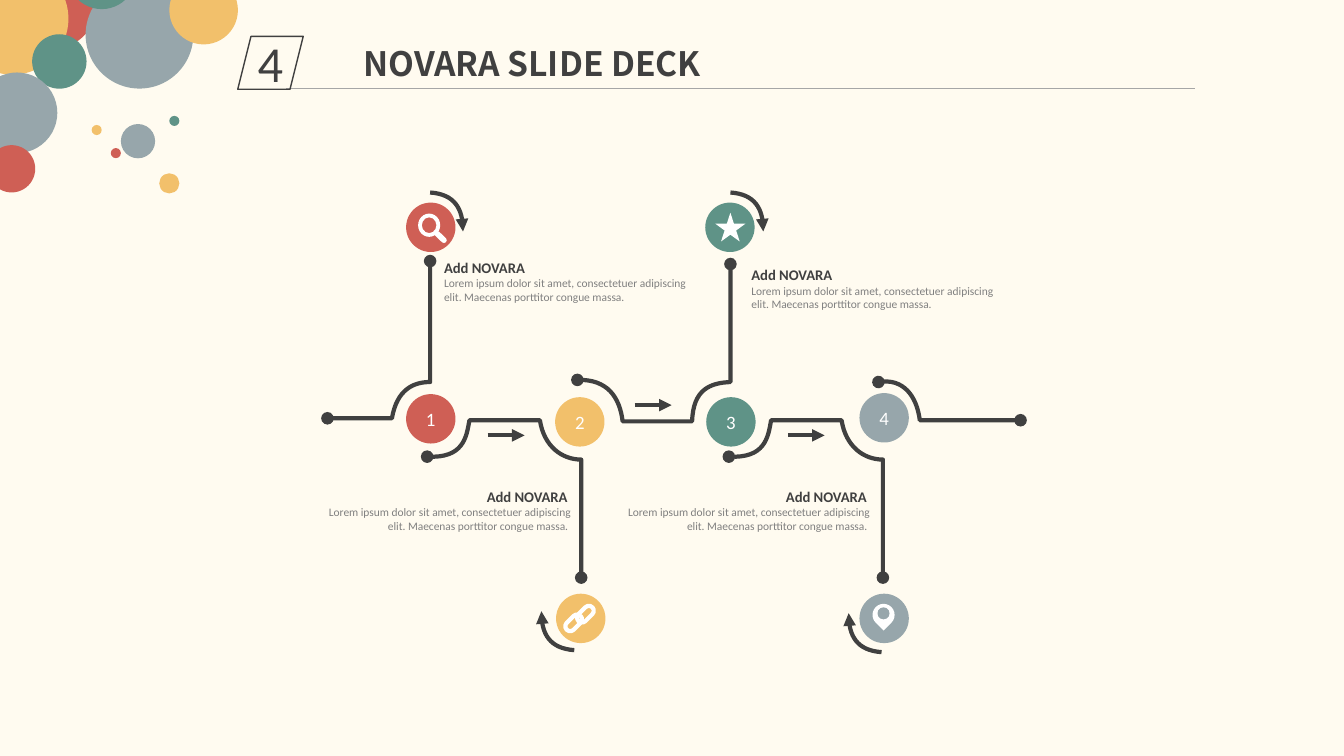
from lxml.etree import SubElement
from pptx import Presentation
from pptx.dml.color import RGBColor
from pptx.enum.shapes import MSO_CONNECTOR, MSO_SHAPE
from pptx.enum.text import MSO_ANCHOR, PP_ALIGN
from pptx.oxml.ns import qn
from pptx.util import Pt

THEME = {
    "bg": "FFFBF0", "ink": "404040", "body": "808080", "rule": "A6A6A6",
    "white": "FFFFFF", "red": "CF5F55", "gold": "F2C06B",
    "green": "5F9387", "gray": "97A6AB",
    "font": "Calibri", "title font": "Noto Sans CJK SC",
    "title": 24, "number": 36, "step": 13.5, "head": 10.5, "small": 8.2,
}
TITLE = "NOVARA SLIDE DECK"
HEAD = "Add NOVARA"
BODY = ("Lorem ipsum dolor sit amet, consectetuer adipiscing elit. "
        "Maecenas porttitor congue massa.")

DISC = 35.3
STEPS = [
    ("1", "red", (290.2, 281.5), (290.2, 144.7)),
    ("2", "gold", (396.7, 283.7), (397.4, 424.1)),
    ("3", "green", (504.7, 283.7), (504, 144.7)),
    ("4", "gray", (614.2, 280.8), (614.2, 424.1)),
]
CAPTIONS = [
    (310.3, 181.4, False), (529.9, 186.5, False),
    (429.8, 344.9, True), (216, 344.9, True),
]
DIP = [(305.3, 326.2), ((331.2, 327.6), (333.4, 312.5), (335.5, 300.2)),
       (385.9, 300.2), ((388.8, 319), (401.8, 328.3), (415.4, 328.3)),
       (415.4, 412.6)]
TRACKS = [
    ([(234, 298.8), (280.1, 298.8),
      ((283.7, 277.9), (295.9, 272.9), (307.4, 272.9)), (307.4, 186.5)], 0),
    (DIP, 0),
    ([(412.6, 271.4), ((434.2, 270.7), (442.8, 283.7), (445, 301)),
      (494.6, 301), ((495.4, 277.9), (507.6, 273.6), (522, 272.9)),
      (522, 188.6)], 0),
    ([(627.8, 272.9), ((645.8, 270), (655.2, 283), (657.4, 300.2)),
      (729.4, 300.2)], 0),
    (DIP, 215.6),
]
TURNS = [(522, 137.5, 1), (307.4, 137.5, 1), (630, 465.8, -1), (410.4, 464.4, -1)]
ARROWS = [(348.5, 311), (453.6, 289.4), (563, 311)]
BUBBLES = [
    (2.9, -31.7, 67, "red"), (-31, -26.6, 79.9, "gold"),
    (23, 24.5, 38.9, "green"), (-16.6, 51.8, 57.6, "gray"),
    (61.2, -13.7, 77, "gray"), (48.2, -42.5, 49, "green"),
    (-8.6, 103.7, 33.8, "red"), (86.4, 88.6, 24.5, "gray"),
    (79.2, 105.8, 7.2, "red"), (65.5, 89.3, 7.2, "gold"),
    (121, 82.8, 7.2, "green"), (113.8, 123.8, 14.4, "gold"),
    (121, -17.3, 49, "gold"),
]

deck = Presentation()
deck.slide_width, deck.slide_height = Pt(960.5), Pt(540)
slide = deck.slides.add_slide(deck.slide_layouts[6])
shapes = slide.shapes


def color(name):
    return RGBColor.from_string(THEME[name])


def paint(shape, fill=None, line=None, width=1):
    shape.shadow.inherit = False
    if fill:
        shape.fill.solid()
        shape.fill.fore_color.rgb = color(fill)
    else:
        shape.fill.background()
    if line:
        shape.line.color.rgb = color(line)
        shape.line.width = Pt(width)
    else:
        shape.line.fill.background()
    return shape


def draw(kind, x, y, w, h, home=shapes, **style):
    return paint(home.add_shape(kind, Pt(x), Pt(y), Pt(w), Pt(h)), **style)


def ends(shape, head=None, tail=None):
    line = shape.line._get_or_add_ln()
    for tag, mark in (("a:headEnd", head), ("a:tailEnd", tail)):
        if mark:
            SubElement(line, qn(tag)).set("type", mark)


def write(text, frame, size="small", ink="ink", font="font", bold=False,
          align=PP_ALIGN.LEFT, more=False):
    para = frame.add_paragraph() if more else frame.paragraphs[0]
    para.alignment = align
    run = para.add_run()
    run.text = text
    run.font.size = Pt(THEME[size])
    run.font.name = THEME[font]
    run.font.bold = bold
    run.font.color.rgb = color(ink)


def label(shape, text, **style):
    frame = shape.text_frame
    frame.margin_left = frame.margin_right = 0
    frame.margin_top = frame.margin_bottom = 0
    frame.word_wrap = False
    frame.vertical_anchor = MSO_ANCHOR.MIDDLE
    write(text, frame, align=PP_ALIGN.CENTER, **style)


def box(x, y, w, h):
    frame = shapes.add_textbox(Pt(x), Pt(y), Pt(w), Pt(h)).text_frame
    frame.word_wrap = True
    return frame


def bend(start, curve, count=16):
    for step in range(1, count + 1):
        t = step / count
        u = 1 - t
        yield tuple(u**3 * a + 3 * u * u * t * b + 3 * u * t * t * c + t**3 * d
                    for a, b, c, d in zip(start, *curve))


def trace(route, dx=0, **marks):
    dots = [route[0]]
    for part in route[1:]:
        dots += bend(dots[-1], part) if len(part) == 3 else [part]
    dots = [((x + dx) * 100, y * 100) for x, y in dots]
    pen = shapes.build_freeform(*dots[0], scale=Pt(0.01))
    pen.add_line_segments(dots[1:], close=False)
    ends(paint(pen.convert_to_shape(), line="ink", width=3), **marks)


def link(x1, y1, x2, y2, ink="ink", width=3):
    line = shapes.add_connector(MSO_CONNECTOR.STRAIGHT, Pt(x1), Pt(y1), Pt(x2), Pt(y2))
    line.line.color.rgb = color(ink)
    line.line.width = Pt(width)
    SubElement(line._element.spPr, qn("a:effectLst"))
    return line


slide.background.fill.solid()
slide.background.fill.fore_color.rgb = color("bg")

for route, dx in TRACKS:
    trace(route, dx, head="oval", tail="oval")
for x, y, way in TURNS:
    curve = [(x + way * a, y + way * b) for a, b in ((17.3, 1.2), (23.6, 11.2), (23.5, 27.8))]
    trace([(x, y), curve], tail="triangle")
for x, y in ARROWS:
    ends(link(x, y, x + 26.4, y), tail="triangle")

for number, tint, spot, badge in STEPS:
    draw(MSO_SHAPE.OVAL, *badge, DISC, DISC, fill=tint)
    disc = draw(MSO_SHAPE.OVAL, *spot, DISC, DISC, fill=tint)
    label(disc, number, size="step", ink="white")

lens = draw(MSO_SHAPE.DONUT, 298.8, 152.6, 15.8, 16.6, fill="white")
lens.adjustments[0] = 0.17
grip = link(312.5, 167, 317.3, 171.6, ink="white", width=4)
grip.line._get_or_add_ln().set("cap", "rnd")
for x, y in ((403, 441.4), (411.4, 435.2)):
    ring = draw(MSO_SHAPE.ROUNDED_RECTANGLE, x, y, 14, 7, line="white", width=3)
    ring.adjustments[0] = 0.5
    ring.rotation = -45
draw(MSO_SHAPE.TEAR, 623.5, 431.3, 15.8, 15.8, fill="white").rotation = 135
draw(MSO_SHAPE.OVAL, 627.1, 433.8, 8.6, 8.6, fill="gray")
draw(MSO_SHAPE.STAR_5_POINT, 511.2, 151.9, 21.6, 20.6, fill="white")

for x, y, right in CAPTIONS:
    frame = box(x, y, 199.1, 40.3)
    side, gap = (PP_ALIGN.RIGHT, " ") if right else (PP_ALIGN.LEFT, "")
    write(HEAD + gap, frame, size="head", bold=True, align=side)
    write(BODY + gap, frame, ink="body", align=side, more=True)

group = shapes.add_group_shape()
for x, y, size, tint in BUBBLES:
    draw(MSO_SHAPE.OVAL, x, y, size, size, home=group.shapes, fill=tint)

link(204.5, 63.4, 853.9, 63.4, ink="rule", width=0.5)
badge = draw(MSO_SHAPE.PARALLELOGRAM, 169.9, 26, 46.8, 37.8, line="ink")
label(badge, "4", size="number")
frame = box(252.7, 27.4, 369.4, 36)
frame.vertical_anchor = MSO_ANCHOR.MIDDLE
write(TITLE, frame, size="title", font="title font", bold=True)

deck.save("out.pptx")
